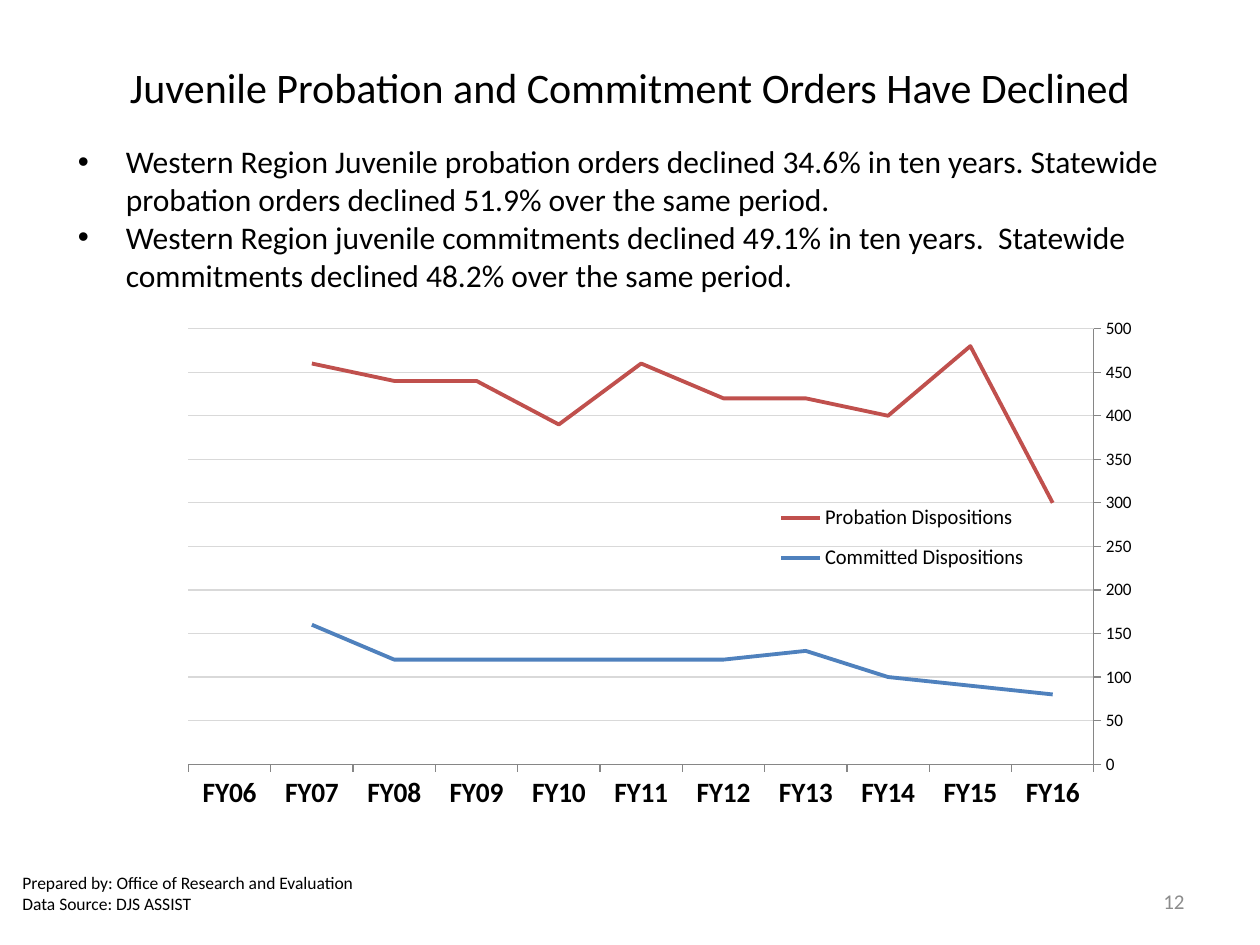
from lxml import etree
from pptx import Presentation
from pptx.chart.data import CategoryChartData
from pptx.dml.color import RGBColor
from pptx.enum.chart import XL_AXIS_CROSSES, XL_CHART_TYPE, XL_LEGEND_POSITION, XL_TICK_MARK
from pptx.enum.text import MSO_ANCHOR, PP_ALIGN
from pptx.oxml.ns import qn
from pptx.util import Inches, Pt

FONT = "Calibri"
COLORS = {"text": "000000", "number": "8C8C8C", "grid": "D9D9D9", "axis": "868686",
          "probation": "C0504D", "committed": "4F81BD"}

TITLE = "Juvenile Probation and Commitment Orders Have Declined"
FINDINGS = [
    "Western Region Juvenile probation orders declined 34.6% in ten years. "
    "Statewide probation orders declined 51.9% over the same period.",
    "Western Region juvenile commitments declined 49.1% in ten years.  "
    "Statewide commitments declined 48.2% over the same period.",
]
SOURCES = ["Prepared by: Office of Research and Evaluation", "Data Source:\u00a0DJS ASSIST"]
PAGE_NUMBER = "12"

# Newest year first; the category axis runs in reverse.
YEARS = [f"FY{year:02}" for year in range(16, 5, -1)]
SERIES = [
    ("Probation Dispositions", "probation",
     [300, 480, 400, 420, 420, 460, 390, 440, 440, 460, None]),
    ("Committed Dispositions", "committed",
     [80, 90, 100, 130, 120, 120, 120, 120, 120, 160, None]),
]

# Left, top, width, height in inches
TITLE_AREA = (0, 0.3, 10, 0.78)
FINDINGS_AREA = (0.52, 1.13, 9.08, 1.42)
CHART_AREA = (1.11, 2.42, 7.9, 4.2)
NUMBER_AREA = (7.17, 6.95, 2.33, 0.4)
SOURCES_AREA = (0.08, 6.83, 2.92, 0.52)
# Shares of the chart's size
PLOT_SHARE = (0.05, 0.045, 0.932, 0.823)
LEGEND_SHARE = (0.64, 0.35, 0.29, 0.18)


def rgb(name):
    return RGBColor.from_string(COLORS[name])


def style_font(font, size, color="text", bold=False):
    font.name, font.size, font.bold = FONT, Pt(size), bold
    font.color.rgb = rgb(color)


def write(frame, lines, size, color="text", align=PP_ALIGN.LEFT, anchor=MSO_ANCHOR.MIDDLE):
    frame.word_wrap = True
    frame.vertical_anchor = anchor
    frame.text = "\n".join(lines)
    for para in frame.paragraphs:
        para.alignment = align
        style_font(para.font, size, color)


def add_text(page, area, *content, **options):
    box = page.shapes.add_textbox(*map(Inches, area))
    write(box.text_frame, *content, **options)
    return box.text_frame


def add_bullet(para, indent):
    props = para._p.get_or_add_pPr()
    props.set("marL", str(Inches(indent)))
    props.set("indent", str(-Inches(indent)))
    bullet_font = etree.Element(qn("a:buFont"), typeface="Arial")
    bullet = etree.Element(qn("a:buChar"), char="•")
    props.insert(0, bullet_font)
    props.insert(1, bullet)


def place_part(part, index, share, inner=False):
    """Give a chart part a fixed place, as shares of the chart's size."""
    for old in part.findall(qn("c:layout")):
        part.remove(old)
    layout = etree.Element(qn("c:layout"))
    part.insert(index, layout)
    manual = etree.SubElement(layout, qn("c:manualLayout"))
    settings = [("layoutTarget", "inner")] if inner else []
    settings += [("xMode", "edge"), ("yMode", "edge"), *zip("xywh", share)]
    for tag, value in settings:
        etree.SubElement(manual, qn(f"c:{tag}"), val=str(value))


def style_axes(chart):
    years, orders = chart.category_axis, chart.value_axis
    for axis, size, bold in ((years, 16, True), (orders, 10, False)):
        style_font(axis.tick_labels.font, size, bold=bold)
        axis.major_tick_mark = XL_TICK_MARK.OUTSIDE
        axis.minor_tick_mark = XL_TICK_MARK.NONE
        axis.format.line.color.rgb = rgb("axis")
    years.reverse_order = True
    years.crosses = XL_AXIS_CROSSES.MAXIMUM
    orders.minimum_scale, orders.maximum_scale, orders.major_unit = 0, 500, 50
    orders.tick_labels.number_format = r"#,##0_);\(#,##0\)"
    orders.tick_labels.number_format_is_linked = False
    grid = orders.major_gridlines.format.line
    grid.color.rgb, grid.width = rgb("grid"), Pt(0.75)


def add_orders_chart(page):
    data = CategoryChartData()
    data.categories = YEARS
    for name, _, values in SERIES:
        data.add_series(name, values)
    chart = page.shapes.add_chart(XL_CHART_TYPE.LINE, *map(Inches, CHART_AREA), data).chart
    chart.has_title = False
    style_font(chart.font, 10)
    style_axes(chart)

    plot = chart.plots[0]
    plot.vary_by_categories = False
    for line, (_, color, _) in zip(plot.series, SERIES):
        line.smooth = False
        line.format.line.color.rgb = rgb(color)
        line.format.line.width = Pt(2.25)

    chart.has_legend = True
    legend = chart.legend
    legend.position = XL_LEGEND_POSITION.RIGHT
    legend.include_in_layout = True
    style_font(legend.font, 12)
    place_part(legend._element, 1, LEGEND_SHARE)
    place_part(chart._chartSpace.chart.plotArea, 0, PLOT_SHARE, inner=True)


def main():
    deck = Presentation()
    deck.slide_width, deck.slide_height = Inches(10), Inches(7.5)
    page = deck.slides.add_slide(deck.slide_layouts[5])

    title = page.shapes.title
    title.left, title.top, title.width, title.height = map(Inches, TITLE_AREA)
    write(title.text_frame, [TITLE], 24, align=PP_ALIGN.CENTER)

    findings = add_text(page, FINDINGS_AREA, FINDINGS, 18, anchor=MSO_ANCHOR.TOP)
    findings.margin_top = 0
    for para in findings.paragraphs:
        add_bullet(para, 0.38)

    add_text(page, NUMBER_AREA, [PAGE_NUMBER], 12, "number", align=PP_ALIGN.RIGHT)
    add_text(page, SOURCES_AREA, SOURCES, 10)
    add_orders_chart(page)
    deck.save("out.pptx")


if __name__ == "__main__":
    main()
